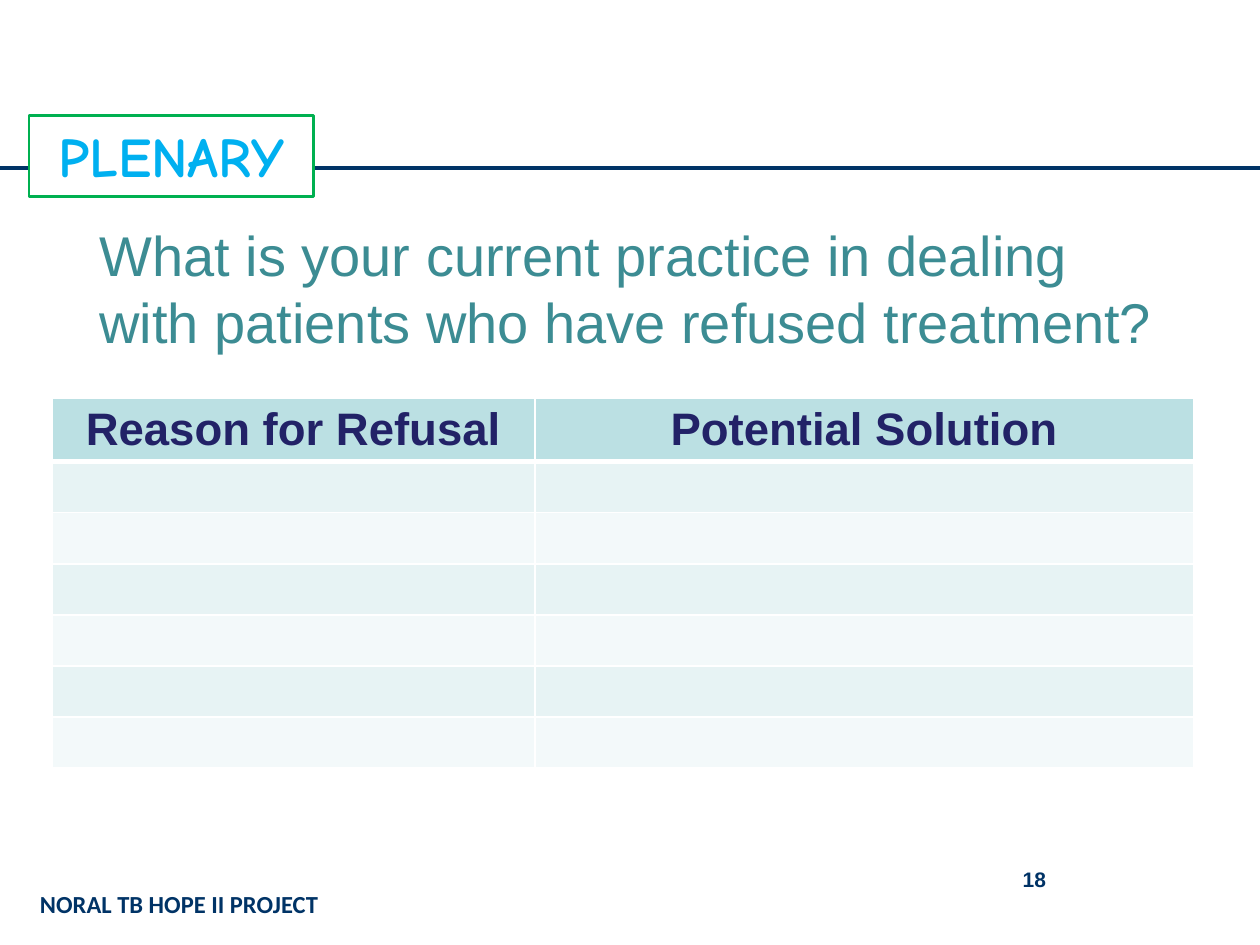
import dataclasses
import typing

import lxml.etree
import pptx
import pptx.dml.color
import pptx.enum.shapes
import pptx.enum.text
import pptx.oxml
import pptx.oxml.ns
import pptx.util

Pt = pptx.util.Pt
Align = pptx.enum.text.PP_ALIGN
Anchor = pptx.enum.text.MSO_ANCHOR

NAVY = "003366"
WHITE = "FFFFFF"
HEADER_FILL = "BBE0E3"
BAND_FILLS = ("E7F3F4", "F3F9FA")
HEADINGS = ("Reason for Refusal", "Potential Solution")
COLUMN_WIDTHS = (275.8, 376.6)
HEADER_HEIGHT = 36
ANSWER_HEIGHT = 29.2
ANSWER_ROWS = 6


@dataclasses.dataclass(frozen=True)
class Style:
    size: float
    color: str
    font: str = "Arial"
    bold: bool = False
    align: typing.Any = Align.LEFT


@dataclasses.dataclass(frozen=True)
class Label:
    text: str
    left: float
    top: float
    width: float
    height: float
    style: Style
    anchor: typing.Any = Anchor.TOP


TITLE = Label("What is your current practice in dealing with patients who have refused treatment?",
              49.7, 102.2, 620.6, 104.4, Style(32, "3C8C93"), Anchor.BOTTOM)
PLENARY = Label("PLENARY", 16.6, 66.2, 162.7, 46.1,
                Style(32, "00B0F0", "Comic Neue", True, Align.CENTER))
FOOTERS = (
    Label("NORAL TB HOPE II PROJECT", 15.8, 504.7, 239.8, 24, Style(14, NAVY, "Calibri", True)),
    Label("18", 516.2, 491.8, 149.8, 36, Style(12, NAVY, bold=True, align=Align.CENTER)),
)
HEADING_STYLE = Style(26, "222267", bold=True, align=Align.CENTER)


def rgb(value: str) -> pptx.dml.color.RGBColor:
    return pptx.dml.color.RGBColor.from_string(value)


def box(label: Label) -> tuple:
    return tuple(Pt(length) for length in (label.left, label.top, label.width, label.height))


def write(frame, text: str, style: Style) -> None:
    paragraph = frame.paragraphs[0]
    paragraph.alignment = style.align
    run = paragraph.add_run()
    run.text = text
    run.font.name = style.font
    run.font.size = Pt(style.size)
    run.font.bold = style.bold
    run.font.color.rgb = rgb(style.color)


def fill_label(shape, label: Label) -> None:
    frame = shape.text_frame
    frame.word_wrap = True
    frame.auto_size = pptx.enum.text.MSO_AUTO_SIZE.NONE
    frame.vertical_anchor = label.anchor
    write(frame, label.text, label.style)


def draw_title(slide, label: Label) -> None:
    title = slide.shapes.title
    title.left, title.top, title.width, title.height = box(label)
    fill_label(title, label)


def draw_rule(slide, y: float, width: float) -> None:
    rule = slide.shapes.add_connector(
        pptx.enum.shapes.MSO_CONNECTOR.STRAIGHT, Pt(0), Pt(y), Pt(width), Pt(y))
    rule.line.color.rgb = rgb(NAVY)
    rule.line.width = Pt(2.25)
    lxml.etree.SubElement(rule._element.spPr, pptx.oxml.ns.qn("a:effectLst"))


def draw_badge(slide, label: Label) -> None:
    badge = slide.shapes.add_shape(pptx.enum.shapes.MSO_SHAPE.RECTANGLE, *box(label))
    badge.shadow.inherit = False
    badge.fill.solid()
    badge.fill.fore_color.rgb = rgb(WHITE)
    badge.line.color.rgb = rgb("00B050")
    badge.line.width = Pt(1.5)
    fill_label(badge, label)


def paint_cell(cell, fill: str, top: float, bottom: float) -> None:
    properties = cell._tc.get_or_add_tcPr()
    for side, width in (("lnL", 1), ("lnR", 1), ("lnT", top), ("lnB", bottom)):
        properties.append(pptx.oxml.parse_xml(
            f'<a:{side} {pptx.oxml.ns.nsdecls("a")} w="{Pt(width)}">'
            f'<a:solidFill><a:srgbClr val="{WHITE}"/></a:solidFill></a:{side}>'))
    cell.fill.solid()
    cell.fill.fore_color.rgb = rgb(fill)


def draw_refusal_table(slide, left: float, top: float) -> None:
    height = HEADER_HEIGHT + ANSWER_ROWS * ANSWER_HEIGHT
    refusals = slide.shapes.add_table(
        ANSWER_ROWS + 1, len(HEADINGS), Pt(left), Pt(top), Pt(sum(COLUMN_WIDTHS)), Pt(height)).table
    for column, width in zip(refusals.columns, COLUMN_WIDTHS):
        column.width = Pt(width)
    for index, row in enumerate(refusals.rows):
        row.height = Pt(ANSWER_HEIGHT if index else HEADER_HEIGHT)
        fill = BAND_FILLS[(index - 1) % 2] if index else HEADER_FILL
        for cell in row.cells:
            cell.margin_left = cell.margin_right = Pt(5)
            paint_cell(cell, fill, 3 if index == 1 else 1, 1 if index else 3)
    for cell, heading in zip(refusals.rows[0].cells, HEADINGS):
        write(cell.text_frame, heading, HEADING_STYLE)


def main() -> None:
    deck = pptx.Presentation()
    deck.slide_width, deck.slide_height = Pt(720), Pt(540)
    slide = deck.slides.add_slide(deck.slide_layouts[5])
    draw_rule(slide, 95.8, 720)
    draw_title(slide, TITLE)
    draw_refusal_table(slide, 29.8, 227.5)
    draw_badge(slide, PLENARY)
    for footer in FOOTERS:
        fill_label(slide.shapes.add_textbox(*box(footer)), footer)
    deck.save("out.pptx")


if __name__ == "__main__":
    main()
